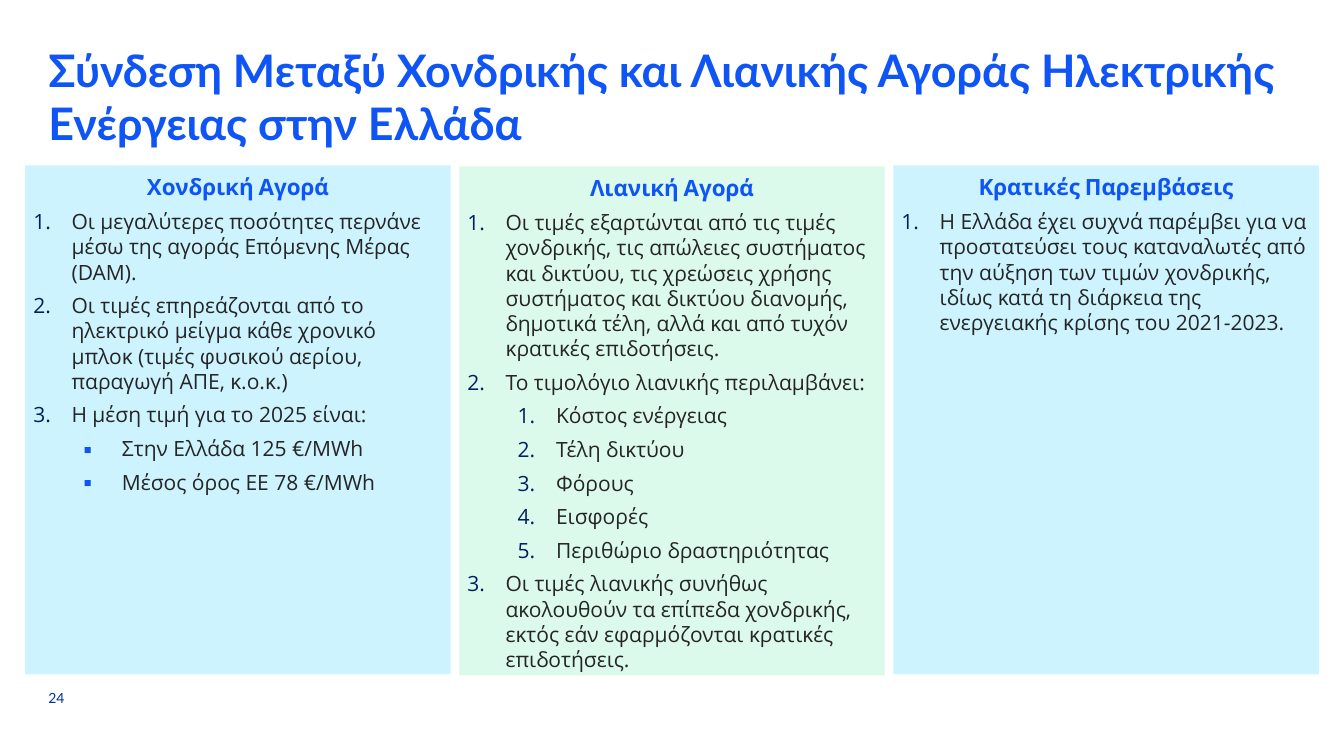
from lxml.etree import SubElement
from pptx import Presentation
from pptx.dml.color import RGBColor
from pptx.enum.shapes import MSO_SHAPE
from pptx.enum.text import MSO_ANCHOR, PP_ALIGN
from pptx.oxml.ns import qn
from pptx.util import Inches, Pt

BRIGHT_BLUE = RGBColor(0x0F, 0x55, 0xF5)
NUMBER_BLUE = RGBColor(0x00, 0x32, 0xA0)
NAVY = RGBColor(0x00, 0x20, 0x60)
DARK_GREY = RGBColor(0x25, 0x25, 0x25)
PALE_BLUE = RGBColor(0xCC, 0xF3, 0xFE)
PALE_GREEN = RGBColor(0xDC, 0xFA, 0xEB)

FIRST_LEFT = 0.25
LAST_LEFT = 8.86
COLUMN_PITCH = (LAST_LEFT - FIRST_LEFT) / 2

# Each item: level, marker, text
COLUMNS = [
    ("Χονδρική Αγορά", PALE_BLUE, [
        (0, "1.", "Οι μεγαλύτερες ποσότητες περνάνε μέσω της αγοράς Επόμενης Μέρας (DAM)."),
        (0, "1.", "Οι τιμές επηρεάζονται από το ηλεκτρικό μείγμα κάθε χρονικό μπλοκ "
                  "(τιμές φυσικού αερίου, παραγωγή ΑΠΕ, κ.ο.κ.)"),
        (0, "1.", "Η μέση τιμή για το 2025 είναι:"),
        (2, "▪", "Στην Ελλάδα 125 €/MWh"),
        (2, "▪", "Μέσος όρος ΕΕ 78 €/MWh"),
    ]),
    ("Λιανική Αγορά", PALE_GREEN, [
        (0, "1.", "Οι τιμές εξαρτώνται από τις τιμές χονδρικής, τις απώλειες συστήματος "
                  "και δικτύου, τις χρεώσεις χρήσης συστήματος και δικτύου διανομής, "
                  "δημοτικά τέλη, αλλά και από τυχόν κρατικές επιδοτήσεις."),
        (0, "1.", "Το τιμολόγιο λιανικής περιλαμβάνει:"),
        (1, "1.", "Κόστος ενέργειας"),
        (1, "1.", "Τέλη δικτύου"),
        (1, "1.", "Φόρους"),
        (1, "1.", "Εισφορές"),
        (1, "1.", "Περιθώριο δραστηριότητας"),
        (0, "1.", "Οι τιμές λιανικής συνήθως ακολουθούν τα επίπεδα χονδρικής, "
                  "εκτός εάν εφαρμόζονται κρατικές επιδοτήσεις."),
    ]),
    ("Κρατικές Παρεμβάσεις", PALE_BLUE, [
        (0, "1.", "Η Ελλάδα έχει συχνά παρέμβει για να προστατεύσει τους καταναλωτές "
                  "από την αύξηση των τιμών χονδρικής, ιδίως κατά τη διάρκεια της "
                  "ενεργειακής κρίσης του 2021-2023."),
    ]),
]


def format_text(paragraph, font_name, size, color, bold=False):
    for run in paragraph.runs:
        run.font.name = font_name
        run.font.size = Pt(size)
        run.font.color.rgb = color
        run.font.bold = bold


def set_marker(paragraph, level, marker):
    """Indent the paragraph and give it a number or a square bullet."""
    paragraph.level = level
    properties = paragraph._p.get_or_add_pPr()
    properties.set("marL", str(Inches(0.88 if level else 0.38)))
    properties.set("indent", str(Inches(-0.38)))
    color = SubElement(SubElement(properties, qn("a:buClr")), qn("a:srgbClr"))
    color.set("val", str(NAVY if marker == "1." else BRIGHT_BLUE))
    if marker == "1.":
        SubElement(properties, qn("a:buFont")).set("typeface", "+mj-lt")
        SubElement(properties, qn("a:buAutoNum")).set("type", "arabicPeriod")
    else:
        SubElement(properties, qn("a:buFont")).set("typeface", "Open Sans")
        SubElement(properties, qn("a:buChar")).set("char", marker)


presentation = Presentation()
presentation.slide_width = Inches(13.33)
presentation.slide_height = Inches(7.5)
slide = presentation.slides.add_slide(presentation.slide_layouts[5])

title = slide.shapes.title
title.left, title.top = Inches(0.48), Inches(0.42)
title.width, title.height = Inches(12.36), Inches(1.08)
title.text_frame.text = ("Σύνδεση Μεταξύ Χονδρικής και Λιανικής Αγοράς Ηλεκτρικής "
                         "Ενέργειας στην Ελλάδα")
title.text_frame.vertical_anchor = MSO_ANCHOR.TOP
title.text_frame.paragraphs[0].alignment = PP_ALIGN.LEFT
format_text(title.text_frame.paragraphs[0], "Lato", 32, BRIGHT_BLUE, True)

page_number = slide.shapes.add_textbox(Inches(0.48), Inches(6.84), Inches(0.28), Inches(0.17))
page_number.text_frame.text = "24"
page_number.text_frame.vertical_anchor = MSO_ANCHOR.BOTTOM
format_text(page_number.text_frame.paragraphs[0], "Lato", 10, NUMBER_BLUE)

for frame in (title.text_frame, page_number.text_frame):
    frame.word_wrap = True
    frame.margin_left = frame.margin_right = frame.margin_top = frame.margin_bottom = 0

for index, (heading, fill_color, items) in enumerate(COLUMNS):
    column = slide.shapes.add_shape(
        MSO_SHAPE.RECTANGLE, Inches(FIRST_LEFT + index * COLUMN_PITCH),
        Inches(1.65 if fill_color == PALE_GREEN else 1.64), Inches(4.22), Inches(5.05))
    column.shadow.inherit = False
    column.fill.solid()
    column.fill.fore_color.rgb = fill_color
    column.line.fill.background()

    frame = column.text_frame
    frame.word_wrap = True
    frame.vertical_anchor = MSO_ANCHOR.TOP
    frame.margin_left = frame.margin_right = Inches(0.08)
    frame.margin_top = frame.margin_bottom = Inches(0.08)
    frame.text = heading
    frame.paragraphs[0].alignment = PP_ALIGN.CENTER
    format_text(frame.paragraphs[0], "Cabin", 16, BRIGHT_BLUE, True)

    for level, marker, text in items:
        paragraph = frame.add_paragraph()
        paragraph.text = text
        set_marker(paragraph, level, marker)
        paragraph.alignment = PP_ALIGN.LEFT
        paragraph.space_before = Pt(6)
        format_text(paragraph, "Open Sans", 15, DARK_GREY)

presentation.save("out.pptx")
